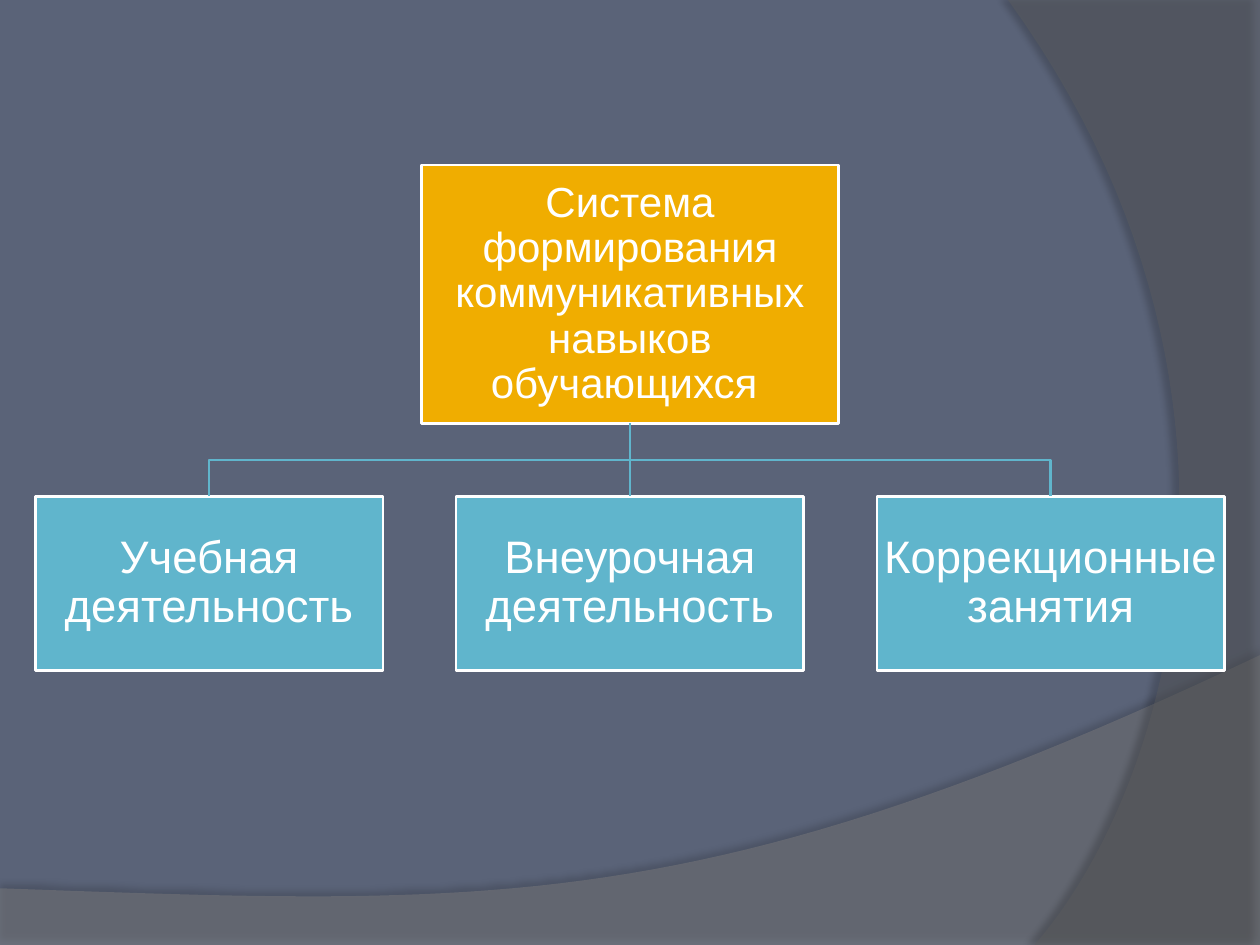
import pptx
import pptx.util
import pptx.dml.color
import pptx.enum.shapes
import pptx.enum.text
import pptx.oxml
import pptx.oxml.ns
from pptx.util import Inches

THEME = {
    "font": "Arial", "background": "5A6378", "root": "F0AD00",
    "child": "60B5CC", "text": "FFFFFF", "root_size": 24, "child_size": 26,
    "line_width": 1.5,
}
ROOT = "Система формирования коммуникативных навыков обучающихся "
CHILDREN = ["Учебная деятельность", "Внеурочная деятельность", "Коррекционные занятия"]
WAVES = [
    {"before": [(0, 7.05), (0, 7.5), (10, 7.5)],
     "curve": [(10, 5.2), (5.59, 7.29), (3.91, 7.19), (0, 7.05)],
     "color": "7F7F7F", "opacity": 45, "shadow": (35, 4, 3.5, 270)},
    {"before": [(10, 0), (10, 7.5)],
     "curve": [(8.21, 7.5), (9.35, 6.19), (10.18, 3), (8, 0)],
     "color": "5E5E5E", "opacity": 40, "shadow": (45, 4, 4, 180)},
]
SLIDE_WIDTH, SLIDE_HEIGHT = 10, 7.5
ROOT_WIDTH, ROOT_HEIGHT, ROOT_TOP = 3.31, 2.05, 1.31
CHILD_WIDTH, CHILD_HEIGHT, CHILD_TOP, CHILD_GAP = 2.76, 1.38, 3.94, 0.58
CURVE_STEPS = 48


def rgb(value):
    return pptx.dml.color.RGBColor.from_string(value)


def bezier(points):
    weights = (1, 3, 3, 1)
    for step in range(CURVE_STEPS + 1):
        t = step / CURVE_STEPS
        factors = [w * (1 - t) ** (3 - i) * t ** i for i, w in enumerate(weights)]
        yield tuple(sum(f * point[axis] for f, point in zip(factors, points)) for axis in (0, 1))


def add_outline(slide, points, close):
    scaled = [(Inches(x), Inches(y)) for x, y in points]
    builder = slide.shapes.build_freeform(*scaled[0])
    builder.add_line_segments(scaled[1:], close=close)
    shape = builder.convert_to_shape()
    shape.shadow.inherit = False
    return shape


def set_line(line, color):
    line.color.rgb = rgb(color)
    line.width = pptx.util.Pt(THEME["line_width"])


def add_wave(slide, wave):
    shape = add_outline(slide, wave["before"] + list(bezier(wave["curve"])), True)
    shape.fill.solid()
    shape.fill.fore_color.rgb = rgb(wave["color"])
    shape.line.fill.background()
    properties = shape.element.spPr
    color = properties.find(".//" + pptx.oxml.ns.qn("a:srgbClr"))
    color.append(pptx.oxml.parse_xml(
        f'<a:alpha {pptx.oxml.ns.nsdecls("a")} val="{wave["opacity"] * 1000}"/>'))
    opacity, blur, distance, angle = wave["shadow"]
    properties.find(pptx.oxml.ns.qn("a:effectLst")).append(pptx.oxml.parse_xml(
        f'<a:outerShdw {pptx.oxml.ns.nsdecls("a")} blurRad="{pptx.util.Pt(blur)}" '
        f'dist="{pptx.util.Pt(distance)}" dir="{angle * 60000}" algn="ctr" rotWithShape="0">'
        f'<a:srgbClr val="000000"><a:alpha val="{opacity * 1000}"/></a:srgbClr></a:outerShdw>'))


def add_box(slide, text, left, top, width, height, fill, size):
    shape = slide.shapes.add_shape(
        pptx.enum.shapes.MSO_SHAPE.RECTANGLE, *map(Inches, (left, top, width, height)))
    shape.shadow.inherit = False
    shape.fill.solid()
    shape.fill.fore_color.rgb = rgb(fill)
    set_line(shape.line, THEME["text"])
    frame = shape.text_frame
    frame.word_wrap = True
    frame.vertical_anchor = pptx.enum.text.MSO_ANCHOR.MIDDLE
    frame.margin_left = frame.margin_right = Inches(0.02)
    frame.margin_top = frame.margin_bottom = Inches(0.02)
    paragraph = frame.paragraphs[0]
    paragraph.text = text
    paragraph.alignment = pptx.enum.text.PP_ALIGN.CENTER
    paragraph.line_spacing = 0.9
    paragraph.font.name = THEME["font"]
    paragraph.font.size = pptx.util.Pt(size)
    paragraph.font.color.rgb = rgb(THEME["text"])
    return shape


def add_branch(slide, root, child, root_x, child_x):
    root_bottom = ROOT_TOP + ROOT_HEIGHT
    if abs(child_x - root_x) < 0.01:
        branch = slide.shapes.add_connector(
            pptx.enum.shapes.MSO_CONNECTOR.STRAIGHT,
            *map(Inches, (root_x, root_bottom, child_x, CHILD_TOP)))
        branch.begin_connect(root, 2)
        branch.end_connect(child, 0)
        set_line(branch.line, THEME["child"])
        branch.element.spPr.append(pptx.oxml.parse_xml(
            f'<a:effectLst {pptx.oxml.ns.nsdecls("a")}/>'))
    else:
        middle = (root_bottom + CHILD_TOP) / 2
        branch = add_outline(slide, [(root_x, root_bottom), (root_x, middle),
                                     (child_x, middle), (child_x, CHILD_TOP)], False)
        branch.fill.background()
        set_line(branch.line, THEME["child"])


def main():
    presentation = pptx.Presentation()
    presentation.slide_width = Inches(SLIDE_WIDTH)
    presentation.slide_height = Inches(SLIDE_HEIGHT)
    slide = presentation.slides.add_slide(presentation.slide_layouts[6])
    slide.background.fill.solid()
    slide.background.fill.fore_color.rgb = rgb(THEME["background"])
    for wave in WAVES:
        add_wave(slide, wave)

    center = SLIDE_WIDTH / 2
    root = add_box(slide, ROOT, center - ROOT_WIDTH / 2, ROOT_TOP, ROOT_WIDTH, ROOT_HEIGHT,
                   THEME["root"], THEME["root_size"])
    pitch = CHILD_WIDTH + CHILD_GAP
    for index, text in enumerate(CHILDREN):
        child_x = center + (index - (len(CHILDREN) - 1) / 2) * pitch
        child = add_box(slide, text, child_x - CHILD_WIDTH / 2, CHILD_TOP, CHILD_WIDTH,
                        CHILD_HEIGHT, THEME["child"], THEME["child_size"])
        add_branch(slide, root, child, center, child_x)
    presentation.save("out.pptx")


if __name__ == "__main__":
    main()
